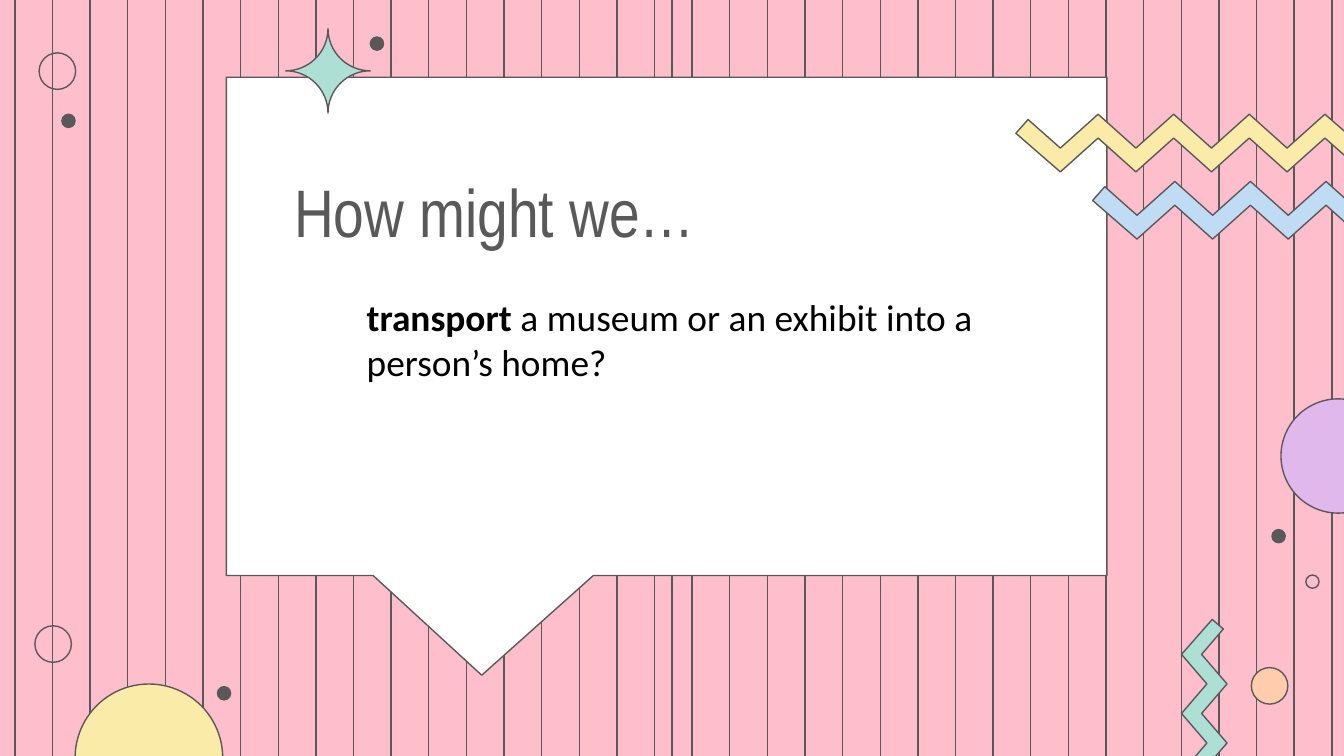
from math import cos, pi, sin

from lxml.etree import SubElement
from pptx import Presentation
from pptx.dml.color import RGBColor
from pptx.enum.shapes import MSO_CONNECTOR, MSO_SHAPE
from pptx.enum.text import MSO_ANCHOR, PP_ALIGN
from pptx.oxml.ns import qn
from pptx.util import Cm, Pt

WIDTH, HEIGHT = 25.4, 14.29
INK, PINK, WHITE, BLACK = "595959", "FFBECB", "FFFFFF", "000000"
YELLOW, BLUE, MINT = "FAEBA8", "C0DCF5", "ADDFD5"
LILAC, PEACH = "E1B8EC", "FFCDAB"


def rgb(color):
    return RGBColor.from_string(color)


class Canvas:
    """Current slide with the shared ink line; all lengths are in cm."""

    def __init__(self, slide):
        self.slide = slide
        self.shapes = slide.shapes
        self.line_width = Pt(0.75)

    def background(self, color):
        fill = self.slide.background.fill
        fill.solid()
        fill.fore_color.rgb = rgb(color)

    def outline(self, sp):
        sp.line.color.rgb = rgb(INK)
        sp.line.width = self.line_width

    def paint(self, sp, color):
        """Apply the flat look; a color of None leaves the shape hollow."""
        sp.shadow.inherit = False
        self.outline(sp)
        if color:
            sp.fill.solid()
            sp.fill.fore_color.rgb = rgb(color)
        else:
            sp.fill.background()
        return sp

    def stripe(self, x):
        line = self.shapes.add_connector(
            MSO_CONNECTOR.STRAIGHT, Cm(x), Cm(0), Cm(x), Cm(HEIGHT))
        self.outline(line)
        SubElement(line._element.spPr, qn("a:effectLst"))

    def preset(self, kind, x, y, w, h, color):
        sp = self.shapes.add_shape(kind, Cm(x), Cm(y), Cm(w), Cm(h))
        return self.paint(sp, color)

    def circle(self, x, y, size, color=None):
        self.preset(MSO_SHAPE.OVAL, x, y, size, size, color)

    def polygon(self, points, color):
        points = [(Cm(x), Cm(y)) for x, y in points]
        builder = self.shapes.build_freeform(*points[0], scale=1.0)
        builder.add_line_segments(points[1:], close=True)
        self.paint(builder.convert_to_shape(), color)

    def zigzag(self, x, y, color, size, cap, first, levels, vertical=False):
        """Draw one edge, then the same edge turned half round.

        size, cap and levels are measured along and across the band.
        """
        length, depth = size
        step = (length - 2 * first) / 7
        edge = cap + [(first + i * step, levels[i % 2]) for i in range(8)]
        band = edge + [(length - u, depth - v) for u, v in edge]
        if vertical:
            band = [(v, u) for u, v in band]
        self.polygon([(x + u, y + v) for u, v in band], color)

    def sparkle(self, cx, cy, radius, color, steps=16):
        """Draw a four-pointed star with quarter-circle hollows."""
        points = []
        for quarter in range(4):
            for i in range(steps):
                angle = pi / 2 * i / steps
                u, v = radius * (cos(angle) - 1), radius * (sin(angle) - 1)
                for _ in range(quarter):
                    u, v = v, -u
                points.append((cx + u, cy + v))
        self.polygon(points, color)

    def text(self, x, y, w, h, parts, font, size, color,
             align=PP_ALIGN.LEFT, anchor=MSO_ANCHOR.TOP):
        """Add one paragraph made of (text, bold) parts."""
        box = self.shapes.add_textbox(Cm(x), Cm(y), Cm(w), Cm(h))
        tf = box.text_frame
        tf.word_wrap = True
        tf.vertical_anchor = anchor
        tf.margin_left = tf.margin_right = Cm(0.25)
        tf.margin_top = tf.margin_bottom = Cm(0.25)
        p = tf.paragraphs[0]
        p.alignment = align
        for text, bold in parts:
            r = p.add_run()
            r.text = text
            r.font.name = font
            r.font.size = Pt(size)
            r.font.bold = bold
            r.font.color.rgb = rgb(color)


def main():
    prs = Presentation()
    prs.slide_width, prs.slide_height = Cm(WIDTH), Cm(HEIGHT)
    s = Canvas(prs.slides.add_slide(prs.slide_layouts[6]))
    s.background(PINK)

    stripe_gap = (25.17 - 0.28) / 35
    for i in range(36):
        s.stripe(0.28 + i * stripe_gap)
    s.stripe(WIDTH / 2)

    s.circle(24.21, 7.54, 2.16, LILAC)
    s.circle(1.42, 12.93, 2.79, YELLOW)
    s.zigzag(22.33, 11.71, MINT, size=(5.23, 0.86),
             cap=[(0.18, 0.79), (0, 0.58)], first=0.66,
             levels=(0, 0.48), vertical=True)
    s.circle(23.65, 12.62, 0.69, PEACH)
    for x, y in [(0.66, 11.83), (0.74, 1.0)]:
        s.circle(x, y, 0.69)
    for x, y in [(7.0, 0.7), (4.11, 12.98), (24.04, 10.01), (1.17, 2.16)]:
        s.circle(x, y, 0.25, INK)
    s.circle(24.68, 10.87, 0.25)

    bubble = s.preset(MSO_SHAPE.ROUNDED_RECTANGULAR_CALLOUT,
                      4.28, 1.46, 16.64, 9.42, WHITE)
    for i, value in enumerate((-0.21, 0.7, 0)):
        bubble.adjustments[i] = value
    s.text(1.88, -0.2, 14.94, 8.38, [("How might we…", False)],
           "Arial Narrow", 36, INK, PP_ALIGN.CENTER, MSO_ANCHOR.MIDDLE)

    for x, y, color in [(19.2, 2.16, YELLOW), (20.65, 3.43, BLUE)]:
        s.zigzag(x, y, color, size=(6.68, 1.09),
                 cap=[(0, 0.36), (0.23, 0.1)], first=0.84,
                 levels=(0.64, 0))
    s.sparkle(6.2, 1.34, 0.8, MINT)

    s.text(6.68, 5.31, 12.07, 2.24,
           [("transport ", True),
            ("a museum or an exhibit into a person’s home?", False)],
           "Calibri", 20, BLACK)

    prs.save("out.pptx")


if __name__ == "__main__":
    main()
